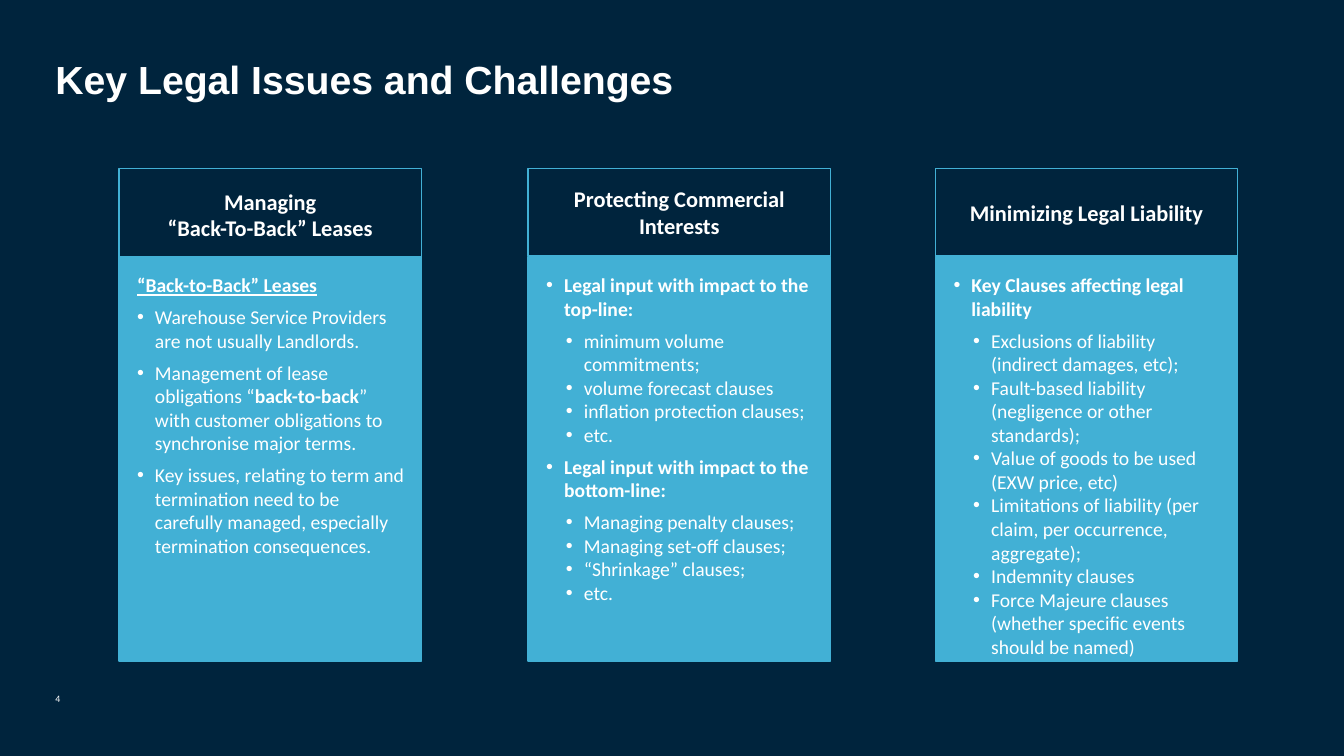
from dataclasses import dataclass

from lxml.etree import SubElement
from pptx import Presentation
from pptx.dml.color import RGBColor
from pptx.enum.shapes import MSO_SHAPE
from pptx.enum.text import MSO_ANCHOR, MSO_AUTO_SIZE, PP_ALIGN
from pptx.oxml.ns import qn
from pptx.util import Pt


@dataclass(frozen=True)
class Theme:
    navy: RGBColor = RGBColor(0x00, 0x24, 0x3D)
    blue: RGBColor = RGBColor(0x42, 0xB0, 0xD5)
    white: RGBColor = RGBColor(0xFF, 0xFF, 0xFF)
    title_font: str = "Arial"
    text_font: str = "Calibri"
    title_size: float = 28
    header_size: float = 16
    body_size: float = 14
    number_size: float = 7


THEME = Theme()

# Paragraph style: left margin, first-line indent, bulleted, in points
STYLES = {
    "heading": (1.4, 0, False),
    "point": (14.2, -12.8, True),
    "detail": (28.3, -12.8, True),
}

# Column: left edge, header height, header lines, body paragraphs (** toggles bold)
COLUMNS = [
    (85, 66.2, ["Managing", "“Back-To-Back” Leases"], [
        ("heading", "**“Back-to-Back” Leases**"),
        ("point", "Warehouse Service Providers are not usually Landlords."),
        ("point", "Management of lease obligations “**back-to-back**” with customer "
                  "obligations to synchronise major terms."),
        ("point", "Key issues, relating to term and termination need to be carefully "
                  "managed, especially termination consequences."),
    ]),
    (377.3, 62.6, ["Protecting Commercial Interests"], [
        ("point", "**Legal input with impact to the top-line:**"),
        ("detail", "minimum volume commitments;"),
        ("detail", "volume forecast clauses"),
        ("detail", "inflation protection clauses;"),
        ("detail", "etc."),
        ("point", "**Legal input with impact to the bottom-line:**"),
        ("detail", "Managing penalty clauses;"),
        ("detail", "Managing set-off clauses;"),
        ("detail", "“Shrinkage” clauses;"),
        ("detail", "etc."),
    ]),
    (668.2, 62.6, ["Minimizing Legal Liability"], [
        ("point", "**Key Clauses affecting legal liability**"),
        ("detail", "Exclusions of liability (indirect damages, etc);"),
        ("detail", "Fault-based liability (negligence or other standards);"),
        ("detail", "Value of goods to be used (EXW price, etc)"),
        ("detail", "Limitations of liability (per claim, per occurrence, aggregate);"),
        ("detail", "Indemnity clauses"),
        ("detail", "Force Majeure clauses (whether specific events should be named)"),
    ]),
]


def format_run(run, size, bold=False, name=THEME.text_font):
    run.font.size = Pt(size)
    run.font.bold = bold
    run.font.name = name
    run.font.color.rgb = THEME.white


def set_insets(text_frame, inset):
    text_frame.margin_left = text_frame.margin_right = Pt(inset)
    text_frame.margin_top = text_frame.margin_bottom = Pt(inset)


def add_paragraph(text_frame, index):
    """Return the frame's first paragraph for index 0, otherwise a new one."""
    return text_frame.add_paragraph() if index else text_frame.paragraphs[0]


def add_panel(slide, left, top, width, height, inset, anchor):
    """Add an outlined rectangle ready for text."""
    shape = slide.shapes.add_shape(
        MSO_SHAPE.RECTANGLE, Pt(left), Pt(top), Pt(width), Pt(height))
    shape.shadow.inherit = False
    shape.line.color.rgb = THEME.blue
    shape.line.width = Pt(1)
    text_frame = shape.text_frame
    text_frame.word_wrap = True
    text_frame.vertical_anchor = anchor
    set_insets(text_frame, inset)
    return shape


def add_header(slide, left, top, width, height, lines):
    shape = add_panel(slide, left, top, width, height, 18.7, MSO_ANCHOR.MIDDLE)
    shape.fill.background()
    for index, line in enumerate(lines):
        paragraph = add_paragraph(shape.text_frame, index)
        paragraph.text = line
        paragraph.alignment = PP_ALIGN.CENTER
        format_run(paragraph.runs[0], THEME.header_size, bold=True)


def format_body_paragraph(paragraph, style, closes_group):
    margin, indent, bulleted = STYLES[style]
    paragraph.alignment = PP_ALIGN.LEFT
    paragraph.level = 1 if style == "detail" else 0
    properties = paragraph._p.get_or_add_pPr()
    properties.set("marL", str(Pt(margin)))
    properties.set("indent", str(Pt(indent)))
    if bulleted:
        SubElement(properties, qn("a:buFont"), typeface="Arial")
        SubElement(properties, qn("a:buChar"), char="•")
    paragraph.space_after = Pt(6 if closes_group else 0)


def add_body(slide, left, top, width, height, items):
    shape = add_panel(slide, left, top, width, height, 11.5, MSO_ANCHOR.TOP)
    shape.fill.solid()
    shape.fill.fore_color.rgb = THEME.blue
    next_styles = [style for style, _ in items[1:]] + ["detail"]
    for index, ((style, text), next_style) in enumerate(zip(items, next_styles)):
        paragraph = add_paragraph(shape.text_frame, index)
        closes_group = style != "detail" or next_style != "detail"
        format_body_paragraph(paragraph, style, closes_group)
        for position, part in enumerate(text.split("**")):
            if part:
                run = paragraph.add_run()
                run.text = part
                format_run(run, THEME.body_size, bold=position % 2 == 1)
                run.font.underline = style == "heading"


def add_column(slide, left, top, width, height, header_height, lines, items):
    body_offset = 63.4
    add_header(slide, left, top, width, header_height, lines)
    add_body(slide, left, top + body_offset, width, height - body_offset, items)


def fill_title(slide, left, top, width, height):
    title = slide.shapes.title
    title.left, title.top, title.width, title.height = map(Pt, (left, top, width, height))
    text_frame = title.text_frame
    text_frame.text = "Key Legal Issues and Challenges"
    text_frame.vertical_anchor = MSO_ANCHOR.TOP
    text_frame.auto_size = MSO_AUTO_SIZE.NONE
    set_insets(text_frame, 0)
    paragraph = text_frame.paragraphs[0]
    paragraph.alignment = PP_ALIGN.LEFT
    format_run(paragraph.runs[0], THEME.title_size, bold=True, name=THEME.title_font)


def add_page_number(slide, left, top, width, height):
    box = slide.shapes.add_textbox(Pt(left), Pt(top), Pt(width), Pt(height))
    text_frame = box.text_frame
    text_frame.word_wrap = True
    text_frame.text = "4"
    set_insets(text_frame, 0)
    format_run(text_frame.paragraphs[0].runs[0], THEME.number_size)


def add_issues_slide(presentation):
    slide = presentation.slides.add_slide(presentation.slide_layouts.get_by_name("Title Only"))
    slide.background.fill.solid()
    slide.background.fill.fore_color.rgb = THEME.navy
    fill_title(slide, 39.6, 39.6, 881.3, 73.4)
    add_page_number(slide, 39.6, 494.6, 32.4, 14.4)
    for left, header_height, lines, items in COLUMNS:
        add_column(slide, left, 120.2, 216, 352.1, header_height, lines, items)


def main():
    presentation = Presentation()
    presentation.slide_width, presentation.slide_height = Pt(960), Pt(540)
    add_issues_slide(presentation)
    presentation.save("out.pptx")


if __name__ == "__main__":
    main()
